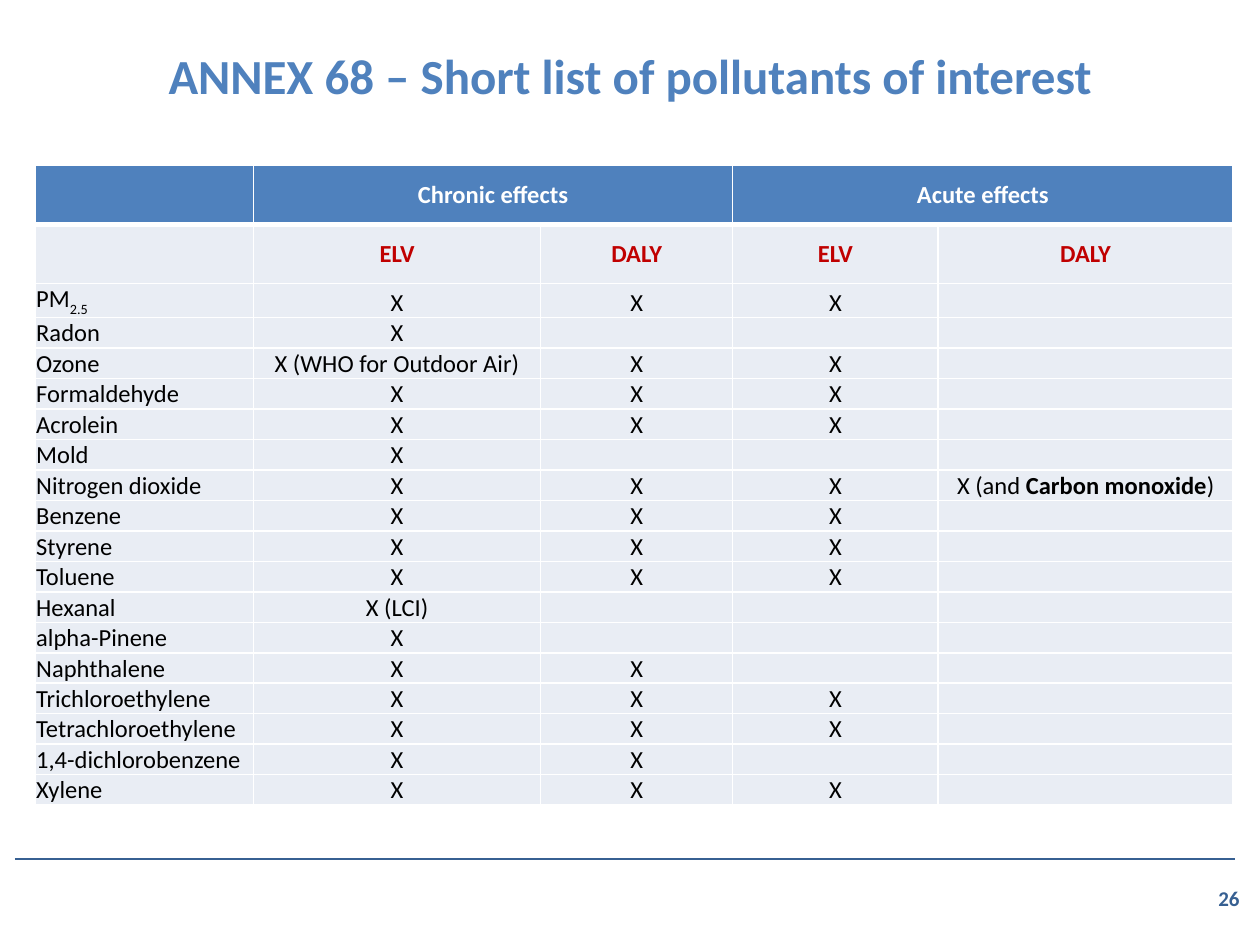
from lxml.etree import SubElement
from pptx import Presentation
from pptx.dml.color import RGBColor
from pptx.enum.shapes import MSO_CONNECTOR
from pptx.enum.text import MSO_ANCHOR as ANCHOR, PP_ALIGN as ALIGN
from pptx.oxml.ns import qn
from pptx.util import Cm, Pt

BLUE, NAVY, RED, PALE = "4F81BD", "376092", "C00000", "E9EDF4"
WHITE, BLACK = "FFFFFF", "000000"
FONT = "Calibri"

COLUMNS = [4.4, 5.79, 3.87, 4.14, 5.95]
HEADER_HEIGHT, ROW_HEIGHT = 1.19, 0.53
GROUPS = ["", "Chronic effects", "", "Acute effects", ""]
MEASURES = ["", "ELV", "DALY", "ELV", "DALY"]
POLLUTANTS = [
    ["PM", "X", "X", "X", ""],
    ["Radon", "X", "", "", ""],
    ["Ozone", "X (WHO for Outdoor Air)", "X", "X", ""],
    ["Formaldehyde", "X", "X", "X", ""],
    ["Acrolein", "X", "X", "X", ""],
    ["Mold", "X", "", "", ""],
    ["Nitrogen dioxide", "X", "X", "X", "X (and "],
    ["Benzene", "X", "X", "X", ""],
    ["Styrene", "X", "X", "X", ""],
    ["Toluene", "X", "X", "X", ""],
    ["Hexanal", "X (LCI)", "", "", ""],
    ["alpha-Pinene", "X", "", "", ""],
    ["Naphthalene", "X", "X", "", ""],
    ["Trichloroethylene", "X", "X", "X", ""],
    ["Tetrachloroethylene", "X", "X", "X", ""],
    ["1,4-dichlorobenzene", "X", "X", "", ""],
    ["Xylene", "X", "X", "X", ""],
]


def rgb(value):
    """Return the colour for a hex string."""
    return RGBColor.from_string(value)


def set_font(p, size, color, bold=False):
    """Set the font of a whole paragraph."""
    font = p.font
    font.name, font.size, font.bold = FONT, Pt(size), bold
    font.color.rgb = rgb(color)


def set_borders(cell, bottom=1):
    """Give a cell white borders, with a chosen bottom width in points."""
    tcPr = cell._tc.get_or_add_tcPr()
    for side, width in (("L", 1), ("R", 1), ("T", 1), ("B", bottom)):
        ln = SubElement(tcPr, qn(f"a:ln{side}"), w=str(Pt(width)))
        fill = SubElement(ln, qn("a:solidFill"))
        SubElement(fill, qn("a:srgbClr"), val=WHITE)


def fill_cell(cell, text, fill, color, bold, align, anchor, bottom=1):
    """Write and format one table cell and return its paragraph."""
    cell.margin_left = cell.margin_right = cell.margin_top = Cm(0.02)
    cell.margin_bottom = 0
    cell.vertical_anchor = anchor
    set_borders(cell, bottom)
    cell.fill.solid()
    cell.fill.fore_color.rgb = rgb(fill)
    p = cell.text_frame.paragraphs[0]
    p.alignment = align
    set_font(p, 14, color, bold)
    if text:
        p.add_run().text = text
    else:
        SubElement(p._p, qn("a:endParaRPr"), sz="1400")
    return p


def add_title(slide, left, top, width, height):
    """Place and format the title placeholder."""
    sp = slide.shapes.title
    sp.left, sp.top, sp.width, sp.height = left, top, width, height
    tf = sp.text_frame
    tf.text = "ANNEX 68 – Short list of pollutants of interest"
    tf.vertical_anchor = ANCHOR.MIDDLE
    p = tf.paragraphs[0]
    p.alignment = ALIGN.CENTER
    set_font(p, 28, BLUE, True)


def add_pollutant_table(slide, left, top):
    """Add the table of pollutants and their effects."""
    rows = [GROUPS, MEASURES] + POLLUTANTS
    heights = [HEADER_HEIGHT] * 2 + [ROW_HEIGHT] * len(POLLUTANTS)
    table = slide.shapes.add_table(len(rows), len(COLUMNS), left, top,
                                   Cm(sum(COLUMNS)), Cm(sum(heights))).table
    table.first_row = table.horz_banding = False
    for column, width in zip(table.columns, COLUMNS):
        column.width = Cm(width)
    for i, (values, height) in enumerate(zip(rows, heights)):
        table.rows[i].height = Cm(height)
        for j, text in enumerate(values):
            cell = table.cell(i, j)
            if i == 0:
                fill_cell(cell, text, BLUE, WHITE, True, ALIGN.CENTER, ANCHOR.MIDDLE, 3)
            elif i == 1:
                fill_cell(cell, text, PALE, RED, True, ALIGN.CENTER, ANCHOR.MIDDLE)
            else:
                align = ALIGN.CENTER if j else ALIGN.LEFT
                p = fill_cell(cell, text, PALE, BLACK, False, align, ANCHOR.BOTTOM)
                if text == "PM":
                    r = p.add_run()
                    r.text = "2.5"
                    r.font._element.set("baseline", "-25000")
                elif text == "X (and ":
                    r = p.add_run()
                    r.text = "Carbon monoxide"
                    r.font.bold = True
                    p.add_run().text = ")"
    for j in (1, 3):
        table.cell(0, j).merge(table.cell(0, j + 1))


def add_footer(slide, left, top, width):
    """Add the footer rule and the page number below its right end."""
    line = slide.shapes.add_connector(MSO_CONNECTOR.STRAIGHT, left, top, left + width, top)
    line.line.color.rgb = rgb(NAVY)
    line.line.width = Pt(1)
    SubElement(line._element.spPr, qn("a:effectLst"))
    box = slide.shapes.add_textbox(left + width - Cm(0.58), top + Cm(0.28), Cm(1.09), Cm(1.02))
    tf = box.text_frame
    tf.word_wrap = True
    tf.vertical_anchor = ANCHOR.MIDDLE
    p = tf.paragraphs[0]
    p.add_run().text = "26"
    set_font(p, 12, NAVY, True)


def main():
    """Build and save the slide."""
    prs = Presentation()
    prs.slide_width, prs.slide_height = Cm(25.4), Cm(19.05)
    slide = prs.slides.add_slide(prs.slide_layouts[5])
    add_title(slide, Cm(1.27), Cm(-0.08), Cm(22.86), Cm(3.18))
    add_footer(slide, Cm(0.3), Cm(17.32), Cm(24.59))
    add_pollutant_table(slide, Cm(0.71), Cm(3.33))
    prs.save("out.pptx")


if __name__ == "__main__":
    main()
